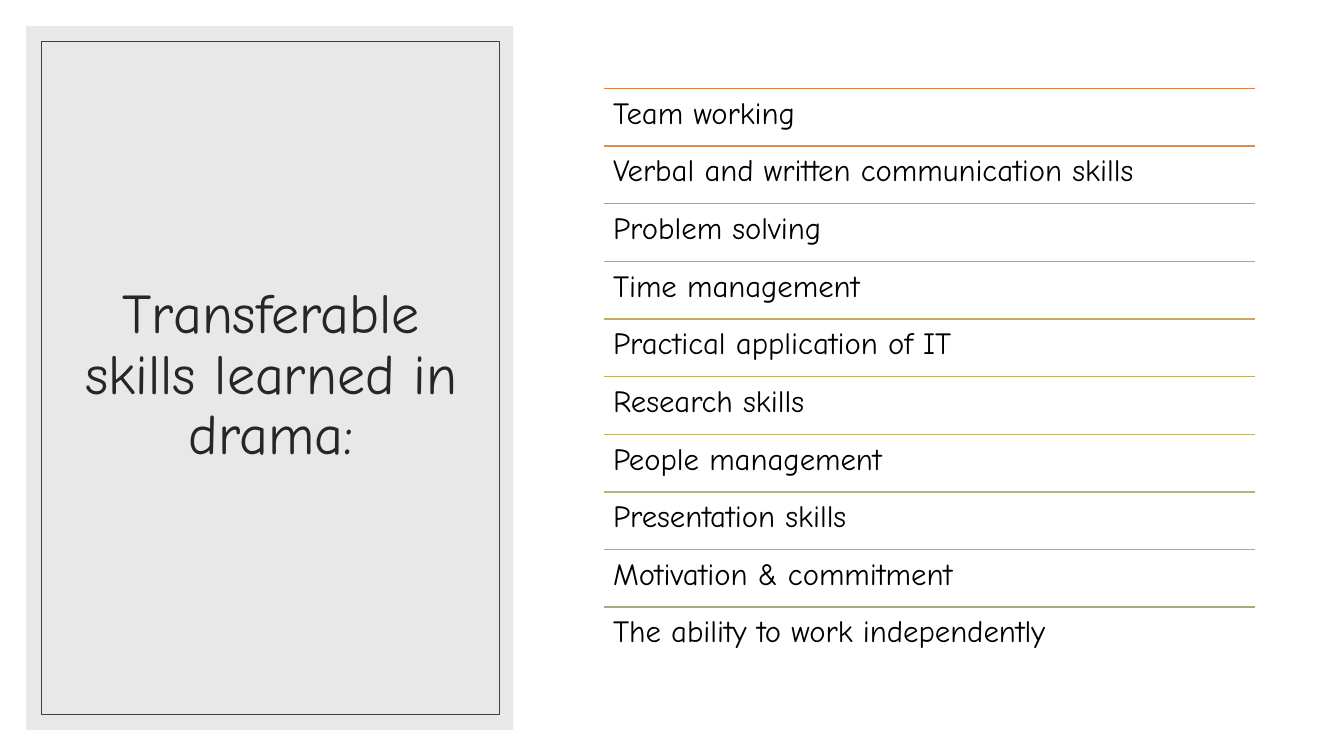
from lxml.etree import SubElement
from pptx import Presentation
from pptx.dml.color import RGBColor
from pptx.enum.shapes import MSO_CONNECTOR as Connector, MSO_SHAPE as Shape
from pptx.enum.text import MSO_ANCHOR as Anchor, PP_ALIGN as Align
from pptx.oxml.ns import qn
from pptx.util import Pt

FONT = "Comic Neue"
WHITE = RGBColor(0xFF, 0xFF, 0xFF)
PANEL_GREY = RGBColor(0xD9, 0xD9, 0xD9)
FRAME_GREY = RGBColor(0x40, 0x40, 0x40)
TITLE_GREY = RGBColor(0x26, 0x26, 0x26)
BLACK = RGBColor(0x00, 0x00, 0x00)

# Each skill with the colour of the rule above it, from orange to sage
SKILLS = [
    ("Team working", RGBColor(0xDD, 0x80, 0x47)),
    ("Verbal and written communication skills", RGBColor(0xD7, 0x8E, 0x4E)),
    ("Problem solving", RGBColor(0xD2, 0x99, 0x54)),
    ("Time management", RGBColor(0xCC, 0xA3, 0x5B)),
    ("Practical application of IT", RGBColor(0xC6, 0xAA, 0x61)),
    ("Research skills", RGBColor(0xC1, 0xAF, 0x68)),
    ("People management", RGBColor(0xBB, 0xB3, 0x6E)),
    ("Presentation skills", RGBColor(0xB6, 0xB4, 0x74)),
    ("Motivation & commitment", RGBColor(0xAD, 0xB0, 0x7B)),
    ("The ability to work independently", RGBColor(0xA5, 0xAB, 0x81)),
]

SLIDE_W, SLIDE_H = 960, 540
LIST_LEFT, LIST_TOP, LIST_W = 431.3, 63.2, 465.1
ROW_H = 41.16


def add_box(slide, left, top, width, height, fill=None, opacity=100, line=None):
    box = slide.shapes.add_shape(Shape.RECTANGLE, Pt(left), Pt(top), Pt(width), Pt(height))
    box.shadow.inherit = False
    if fill is None:
        box.fill.background()
    else:
        box.fill.solid()
        box.fill.fore_color.rgb = fill
        if opacity < 100:
            colour = box.fill._xPr.find(qn("a:solidFill"))[0]
            SubElement(colour, qn("a:alpha"), val=str(opacity * 1000))
    if line is None:
        box.line.fill.background()
    else:
        box.line.color.rgb = line
        box.line.width = Pt(0.5)


def add_text(slide, text, left, top, width, height, size=22, color=BLACK,
             align=Align.LEFT, anchor=Anchor.TOP, inset_x=6.6, inset_y=6.6):
    frame = slide.shapes.add_textbox(Pt(left), Pt(top), Pt(width), Pt(height)).text_frame
    frame.word_wrap = True
    frame.vertical_anchor = anchor
    frame.margin_left = frame.margin_right = Pt(inset_x)
    frame.margin_top = frame.margin_bottom = Pt(inset_y)
    paragraph = frame.paragraphs[0]
    paragraph.alignment = align
    paragraph.line_spacing = 0.9
    run = paragraph.add_run()
    run.text = text
    run.font.name = FONT
    run.font.size = Pt(size)
    run.font.color.rgb = color


def add_rule(slide, left, top, width, color):
    rule = slide.shapes.add_connector(
        Connector.STRAIGHT, Pt(left), Pt(top), Pt(left + width), Pt(top))
    rule.line.color.rgb = color
    rule.line.width = Pt(1)
    SubElement(rule._element.spPr, qn("a:effectLst"))


def main():
    deck = Presentation()
    deck.slide_width, deck.slide_height = Pt(SLIDE_W), Pt(SLIDE_H)
    slide = deck.slides.add_slide(deck.slide_layouts[6])

    # Backdrop and title panel with its thin frame
    add_box(slide, 0, 0, SLIDE_W, SLIDE_H, fill=WHITE)
    add_box(slide, 18.7, 18.7, 347.8, 502.6, fill=PANEL_GREY, opacity=60)
    add_text(slide, "Transferable skills learned in drama:", 45.4, 43.9, 296.6, 449.3,
             size=40, color=TITLE_GREY, align=Align.CENTER, anchor=Anchor.MIDDLE,
             inset_x=7.2, inset_y=3.6)
    add_box(slide, 29.5, 29.5, 327.1, 481, line=FRAME_GREY)

    # Ruled list of skills
    for row, (skill, rule_color) in enumerate(SKILLS):
        top = LIST_TOP + row * ROW_H
        add_rule(slide, LIST_LEFT, top, LIST_W, rule_color)
        add_text(slide, skill, LIST_LEFT, top, LIST_W, ROW_H)

    deck.save("out.pptx")


if __name__ == "__main__":
    main()
